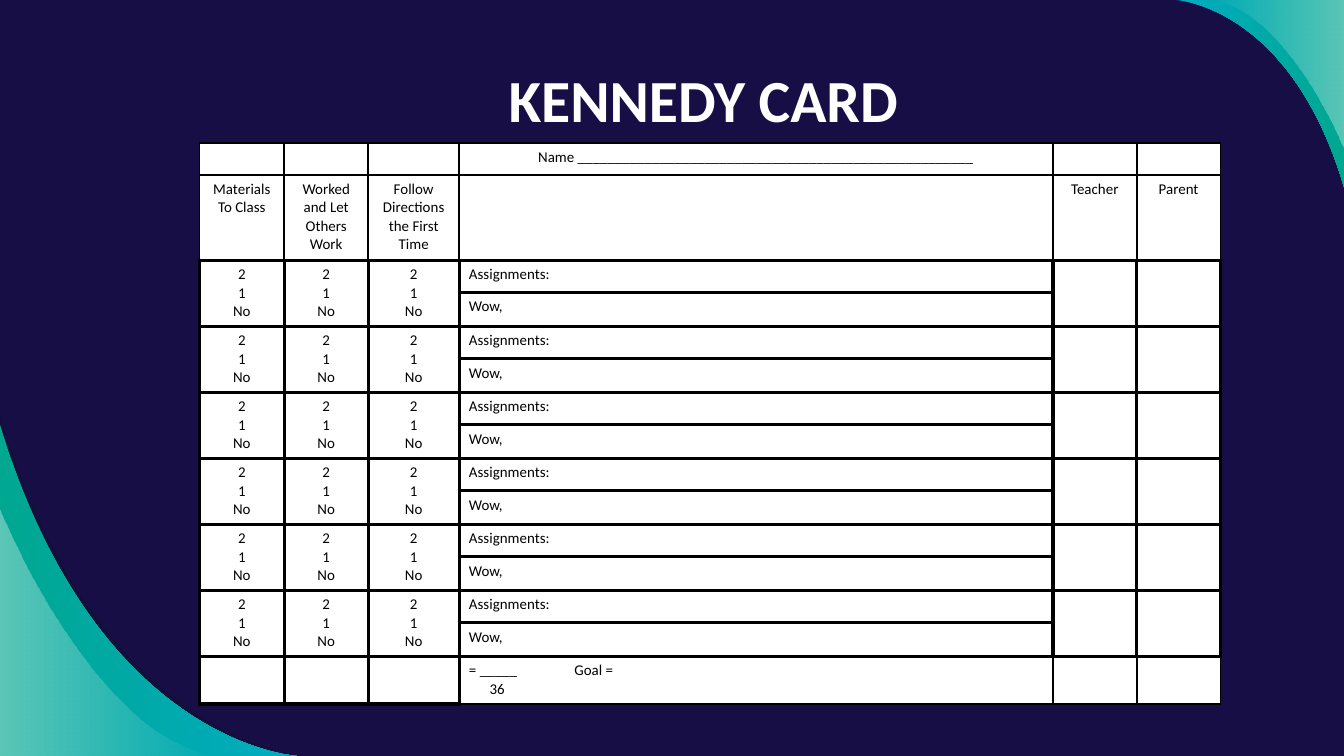
from dataclasses import dataclass

from lxml import etree
from pptx import Presentation
from pptx.dml.color import RGBColor
from pptx.enum import text
from pptx.oxml import ns
from pptx.util import Pt

NAVY = RGBColor(0x16, 0x0E, 0x44)
SHADE = RGBColor(0x12, 0x10, 0x2F)
BLUE = RGBColor(0x00, 0xAC, 0xC2)
GREEN = RGBColor(0x00, 0xA7, 0x91)
WHITE = RGBColor(0xFF, 0xFF, 0xFF)
BLACK = RGBColor(0x00, 0x00, 0x00)
FONT = "Calibri"
WIDTH, HEIGHT = 720, 405
CENTER, LEFT = text.PP_ALIGN.CENTER, text.PP_ALIGN.LEFT

Point = tuple[float, float]


@dataclass
class Wedge:
    """A slide corner cut off by one Bezier curve; stops are (colour, opacity %)."""
    corner: Point
    curve: tuple[Point, Point, Point, Point]
    stops: list[tuple[RGBColor, int]]


BOTTOM_LEFT, TOP_RIGHT = (0, HEIGHT), (WIDTH, 0)
WEDGES = [
    Wedge(BOTTOM_LEFT, ((0, 223.2), (52.6, 398.9), (163.4, 405), (163.4, 405)),
          [(SHADE, 54)]),
    Wedge(BOTTOM_LEFT, ((0, 227.5), (51.8, 399.6), (159.1, 405), (159.1, 405)),
          [(GREEN, 100), (BLUE, 100)]),
    Wedge(BOTTOM_LEFT, ((0, 273.6), (0, 273.6), (49.7, 396.7), (116.6, 405)),
          [(WHITE, 36), (WHITE, 0)]),
    Wedge(TOP_RIGHT, ((630, 0), (630, 0), (691.2, 2.9), (720, 100.1)),
          [(BLUE, 100), (GREEN, 100)]),
    Wedge(TOP_RIGHT, ((648.7, 0), (689.8, 5), (720, 80.6), (720, 80.6)),
          [(WHITE, 0), (WHITE, 36)]),
]

# Table content
COLUMNS = [45.4, 45, 48.8, 318, 45, 44.8]
PERIODS = 6
ROWS = [17.3, 45.6] + [17.3, 18.1] * PERIODS + [25.4]
NOTES = 3  # the wide column
HEADINGS = {0: ["Materials", "To Class"], 1: ["Worked and Let Others Work"],
            2: ["Follow Directions the First Time"], 4: ["Teacher"], 5: ["Parent"]}


def write(tf, lines: list[str], *, size: float, color: RGBColor,
          bold: bool = False, align=LEFT) -> None:
    for i, line in enumerate(lines):
        p = tf.paragraphs[0] if i == 0 else tf.add_paragraph()
        p.alignment = align
        r = p.add_run()
        r.text = line
        r.font.name, r.font.size, r.font.bold = FONT, Pt(size), bold
        r.font.color.rgb = color


def set_opacity(fill_xml, opacities: list[int]) -> None:
    for clr, opacity in zip(fill_xml.iter(ns.qn("a:srgbClr")), opacities):
        if opacity < 100:
            etree.SubElement(clr, ns.qn("a:alpha"), val=str(opacity * 1000))


def draw_wedge(s, wedge: Wedge) -> None:
    outline = [(Pt(x), Pt(y)) for x, y in (*wedge.curve, wedge.corner)]
    builder = s.shapes.build_freeform(*outline[0])
    builder.add_line_segments(outline[1:], close=True)
    sp = builder.convert_to_shape()

    # Turn the first three line segments into one curve
    segments = list(sp._element.iter(ns.qn("a:lnTo")))[:3]
    curve = etree.Element(ns.qn("a:cubicBezTo"))
    segments[0].addprevious(curve)
    for segment in segments:
        curve.append(segment[0])
        segment.getparent().remove(segment)

    sp.shadow.inherit = False
    sp.line.fill.background()
    if len(wedge.stops) == 1:
        sp.fill.solid()
        sp.fill.fore_color.rgb = wedge.stops[0][0]
    else:
        sp.fill.gradient()
        sp.fill.gradient_angle = 0
        for stop, (color, _) in zip(sp.fill.gradient_stops, wedge.stops):
            stop.color.rgb = color
    set_opacity(sp._element.spPr, [opacity for _, opacity in wedge.stops])


def border_widths(row: int, col: int) -> dict[str, float]:
    last = len(ROWS) - 1
    if row == 0:
        left = right = top = bottom = 1
    elif row == 1:
        left = right = top = 1
        bottom = 2
    elif row == last and col >= NOTES:
        left = 2 if col == NOTES else 1
        top, right, bottom = 2, 1, 1
    else:
        left = right = top = bottom = 2
    return {"lnL": left, "lnR": right, "lnT": top, "lnB": bottom}


def format_cell(cell, row: int, col: int) -> None:
    cell.margin_left = cell.margin_right = Pt(5.2)
    cell.margin_top = cell.margin_bottom = Pt(2.7)
    cell.fill.solid()
    cell.fill.fore_color.rgb = WHITE
    tc_pr = cell._tc.get_or_add_tcPr()
    for i, (side, width) in enumerate(border_widths(row, col).items()):
        ln = etree.Element(ns.qn(f"a:{side}"), w=str(Pt(width)))
        fill = etree.SubElement(ln, ns.qn("a:solidFill"))
        etree.SubElement(fill, ns.qn("a:srgbClr"), val=str(BLACK))
        tc_pr.insert(i, ln)
    # Small type in empty cells keeps the rows low
    if not cell.text_frame.text:
        p = cell.text_frame.paragraphs[0]._p
        etree.SubElement(p, ns.qn("a:endParaRPr"), sz="800")


def draw_table(s) -> None:
    frame = s.shapes.add_table(len(ROWS), len(COLUMNS), Pt(106.9), Pt(76.6),
                               Pt(sum(COLUMNS)), Pt(sum(ROWS)))
    table = frame.table
    for column, width in zip(table.columns, COLUMNS):
        column.width = Pt(width)
    for row, height in zip(table.rows, ROWS):
        row.height = Pt(height)

    def fill_cell(row: int, col: int, lines: list[str], align=LEFT) -> None:
        write(table.cell(row, col).text_frame, lines, size=8, color=BLACK, align=align)

    # Header rows
    fill_cell(0, NOTES, ["Name " + "_" * 53], CENTER)
    for col, lines in HEADINGS.items():
        fill_cell(1, col, lines, CENTER)

    # Two rows for each class period
    for top in range(2, 2 + 2 * PERIODS, 2):
        for col in range(len(COLUMNS)):
            if col != NOTES:
                table.cell(top, col).merge(table.cell(top + 1, col))
            if col < NOTES:
                fill_cell(top, col, ["2", "1", "No"], CENTER)
        fill_cell(top, NOTES, ["Assignments:"])
        fill_cell(top + 1, NOTES, ["Wow,"])

    # Total row: tab before the goal, indent under the score line
    last = len(ROWS) - 1
    fill_cell(last, NOTES, ["= _____\tGoal =", "36"])
    score, total = table.cell(last, NOTES).text_frame.paragraphs
    tabs = etree.SubElement(score._p.get_or_add_pPr(), ns.qn("a:tabLst"))
    etree.SubElement(tabs, ns.qn("a:tab"), pos=str(Pt(56.5)), algn="l")
    total._p.get_or_add_pPr().set("marL", str(Pt(11)))

    for row in range(len(ROWS)):
        for col in range(len(COLUMNS)):
            format_cell(table.cell(row, col), row, col)


def main() -> None:
    prs = Presentation()
    prs.slide_width, prs.slide_height = Pt(WIDTH), Pt(HEIGHT)
    s = prs.slides.add_slide(prs.slide_layouts[5])
    s.background.fill.solid()
    s.background.fill.fore_color.rgb = NAVY

    # Corner decoration
    for wedge in WEDGES:
        draw_wedge(s, wedge)

    # Title
    title = s.shapes.title
    title.left, title.top, title.width, title.height = Pt(100), Pt(26.6), Pt(553.7), Pt(50)
    tf = title.text_frame
    tf.margin_left = tf.margin_right = tf.margin_top = tf.margin_bottom = Pt(7.2)
    tf.vertical_anchor = text.MSO_ANCHOR.TOP
    tf.auto_size = text.MSO_AUTO_SIZE.NONE
    write(tf, ["KENNEDY CARD"], size=32, color=WHITE, bold=True, align=CENTER)

    draw_table(s)
    prs.save("out.pptx")


if __name__ == "__main__":
    main()
